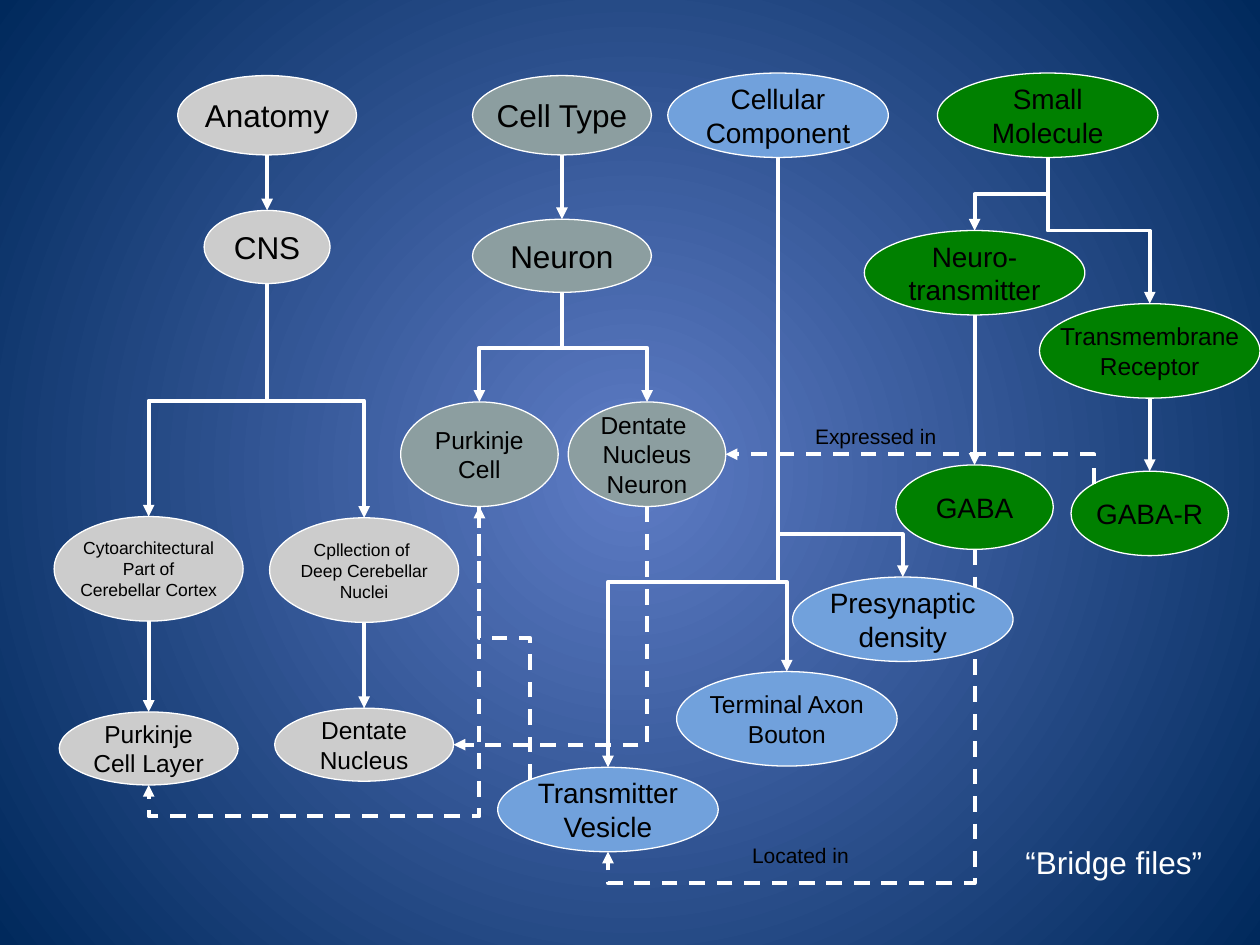
"""Build a slide of ontology trees bridged by dashed relations."""
from dataclasses import dataclass
from enum import Enum
from typing import Optional

from lxml import etree
from pptx import Presentation
from pptx import util as u
from pptx.dml.color import RGBColor
from pptx.enum import dml, shapes, text
from pptx.oxml.ns import qn

COLORS = {
    "anatomy": "CCCCCC",
    "cell": "8C9EA0",
    "component": "71A1DC",
    "molecule": "008000",
    "line": "FFFFFF",
    "ink": "000000",
    "glow": "5E7CC5",
    "edge": "00295C",
}


class Side(Enum):
    """Attachment point as fractions of an oval's width and height."""
    TOP = (0.5, 0)
    BOTTOM = (0.5, 1)
    RIGHT = (1, 0.5)
    TOP_LEFT = (0.146, 0.146)


@dataclass(frozen=True)
class Oval:
    """A term in one of the trees."""
    words: str
    family: str
    left: float
    top: float
    width: float
    height: float
    size: int

    def point(self, side: Side) -> tuple[float, float]:
        """Return the position of an attachment point."""
        across, down = side.value
        return self.left + across * self.width, self.top + down * self.height


@dataclass(frozen=True)
class Link:
    """An arrow between two ovals, straight or turning at a height."""
    source: str
    target: str
    turn: Optional[float] = None
    start: Side = Side.BOTTOM
    end: Side = Side.TOP
    dashed: bool = False
    corner: bool = False


@dataclass(frozen=True)
class Label:
    """A loose line of text."""
    words: str
    left: float
    top: float
    width: float
    height: float
    size: int
    color: str


OVALS = {
    "anatomy": Oval("Anatomy", "anatomy", 1.41, 0.6, 1.42, 0.63, 18),
    "cell type": Oval("Cell Type", "cell", 3.75, 0.6, 1.42, 0.63, 18),
    "component": Oval("Cellular\nComponent", "component", 5.3, 0.58, 1.75, 0.67, 16),
    "molecule": Oval("Small\nMolecule", "molecule", 7.44, 0.58, 1.75, 0.67, 16),
    "transmitter": Oval("Neuro-\ntransmitter", "molecule", 6.86, 1.83, 1.75, 0.67, 16),
    "receptor": Oval("Transmembrane\nReceptor", "molecule", 8.25, 2.41, 1.75, 0.75, 14),
    "gaba": Oval("GABA", "molecule", 7.11, 3.69, 1.25, 0.67, 16),
    "gaba-r": Oval("GABA-R", "molecule", 8.5, 3.74, 1.25, 0.67, 16),
    "vesicle": Oval("Transmitter\nVesicle", "component", 3.95, 6.09, 1.75, 0.67, 16),
    "bouton": Oval("Terminal Axon\nBouton", "component", 5.37, 5.33, 1.75, 0.75, 14),
    "density": Oval("Presynaptic\ndensity", "component", 6.29, 4.58, 1.75, 0.67, 16),
    "purkinje": Oval("Purkinje\nCell", "cell", 3.18, 3.19, 1.25, 0.83, 14),
    "neuron": Oval("Neuron", "cell", 3.75, 1.74, 1.42, 0.58, 18),
    "dentate": Oval("Dentate \nNucleus\nNeuron", "cell", 4.51, 3.19, 1.25, 0.83, 14),
    "cns": Oval("CNS", "anatomy", 1.62, 1.67, 1, 0.58, 18),
    "nuclei": Oval("Cpllection of \nDeep Cerebellar\nNuclei", "anatomy", 2.14, 4.11, 1.5, 0.83, 10),
    "layer": Oval("Purkinje\nCell Layer", "anatomy", 0.47, 5.65, 1.42, 0.58, 14),
    "nucleus": Oval("Dentate\nNucleus", "anatomy", 2.18, 5.62, 1.42, 0.58, 14),
    "cortex": Oval("Cytoarchitectural\nPart of\nCerebellar Cortex", "anatomy", 0.43, 4.1, 1.5, 0.83, 10),
}

LOCATED_IN = Link("gaba", "vesicle", 7.01, end=Side.BOTTOM, dashed=True)

LINKS = [
    Link("molecule", "transmitter", 1.54),
    Link("molecule", "receptor", 1.83),
    Link("transmitter", "gaba"),
    Link("receptor", "gaba-r"),
    Link("component", "density", 4.24),
    Link("component", "bouton", 4.62),
    Link("component", "vesicle", 4.62),
    Link("cell type", "neuron"),
    Link("neuron", "purkinje", 2.76),
    Link("neuron", "dentate", 2.76),
    Link("anatomy", "cns"),
    Link("cns", "cortex", 3.18),
    Link("cns", "nuclei", 3.18),
    Link("cortex", "layer"),
    Link("nuclei", "nucleus"),
    Link("purkinje", "layer", 6.48, end=Side.BOTTOM, dashed=True),
    Link("dentate", "nucleus", end=Side.RIGHT, dashed=True, corner=True),
    Link("gaba-r", "dentate", start=Side.TOP_LEFT, end=Side.RIGHT, dashed=True, corner=True),
    Link("vesicle", "purkinje", 5.06, Side.TOP_LEFT, Side.BOTTOM, True),
]

LABELS = [
    Label("Expressed in", 6.37, 3.31, 1.42, 0.3, 12, "ink"),
    Label("Located in", 5.87, 6.64, 1.42, 0.3, 12, "ink"),
    Label("“Bridge files”", 8.04, 6.64, 1.71, 0.4, 18, "line"),
]


def color(name: str) -> RGBColor:
    """Look up a named colour."""
    return RGBColor.from_string(COLORS[name])


def write(frame, words: str, size: int, ink: str, align) -> None:
    """Fill a text frame with one paragraph per line."""
    for index, line in enumerate(words.split("\n")):
        para = frame.add_paragraph() if index else frame.paragraphs[0]
        para.alignment = align
        span = para.add_run()
        span.text = line
        span.font.name = "Arial"
        span.font.size = u.Pt(size)
        span.font.color.rgb = color(ink)


def paint_background(page) -> None:
    """Give the page a glow from its centre."""
    fill = page.background.fill
    fill.gradient()
    for stop, name in zip(fill.gradient_stops, ("glow", "edge")):
        stop.color.rgb = color(name)
    gradient = page.element.find(".//" + qn("a:gradFill"))
    gradient.remove(gradient.find(qn("a:lin")))
    circle = etree.SubElement(gradient, qn("a:path"), path="circle")
    etree.SubElement(circle, qn("a:fillToRect"), l="50000", t="50000", r="50000", b="50000")


def draw_oval(page, oval: Oval) -> None:
    """Draw a term."""
    box = page.shapes.add_shape(
        shapes.MSO_SHAPE.OVAL, *map(u.Inches, (oval.left, oval.top, oval.width, oval.height)))
    box.shadow.inherit = False
    box.fill.solid()
    box.fill.fore_color.rgb = color(oval.family)
    box.line.color.rgb = color("line")
    box.line.width = u.Pt(0.75)
    box.text_frame.word_wrap = False
    box.text_frame.vertical_anchor = text.MSO_ANCHOR.MIDDLE
    write(box.text_frame, oval.words, oval.size, "ink", text.PP_ALIGN.CENTER)


def draw_link(page, link: Link) -> None:
    """Draw an arrow; bent ones leave vertically, so they are turned a quarter."""
    x1, y1 = OVALS[link.source].point(link.start)
    x2, y2 = OVALS[link.target].point(link.end)
    bent = link.corner or link.turn is not None
    kind = shapes.MSO_CONNECTOR.ELBOW if bent else shapes.MSO_CONNECTOR.STRAIGHT
    ends = (x1, y1, x2, y2)
    quarter = -1 if x2 > x1 else 1
    if bent:
        middle_x, middle_y = (x1 + x2) / 2, (y1 + y2) / 2
        half_x, half_y = quarter * (y2 - y1) / 2, quarter * (x1 - x2) / 2
        ends = (middle_x - half_x, middle_y - half_y, middle_x + half_x, middle_y + half_y)
    arrow = page.shapes.add_connector(kind, *map(u.Inches, ends))
    arrow.line.color.rgb = color("line")
    arrow.line.width = u.Pt(2.25)
    if link.dashed:
        arrow.line.dash_style = dml.MSO_LINE.DASH
    props = arrow.element.spPr
    etree.SubElement(props.find(qn("a:ln")), qn("a:tailEnd"), type="triangle")
    etree.SubElement(props, qn("a:effectLst"))
    if bent:
        props.find(qn("a:xfrm")).set("rot", str(quarter * 90 % 360 * 60000))
    shape = props.find(qn("a:prstGeom"))
    if link.corner:
        shape.set("prst", "bentConnector2")
    elif bent:
        ratio = round((link.turn - y1) / (y2 - y1) * 100000)
        etree.SubElement(shape.find(qn("a:avLst")), qn("a:gd"), name="adj1", fmla=f"val {ratio}")


def draw_label(page, label: Label) -> None:
    """Draw a loose line of text."""
    box = page.shapes.add_textbox(*map(u.Inches, (label.left, label.top, label.width, label.height)))
    box.text_frame.word_wrap = True
    write(box.text_frame, label.words, label.size, label.color, text.PP_ALIGN.LEFT)


def main() -> None:
    """Build and save the deck."""
    deck = Presentation()
    deck.slide_width, deck.slide_height = u.Inches(10), u.Inches(7.5)
    page = deck.slides.add_slide(deck.slide_layouts[6])
    paint_background(page)
    draw_link(page, LOCATED_IN)
    for oval in OVALS.values():
        draw_oval(page, oval)
    for link in LINKS:
        draw_link(page, link)
    for label in LABELS:
        draw_label(page, label)
    deck.save("out.pptx")


if __name__ == "__main__":
    main()
